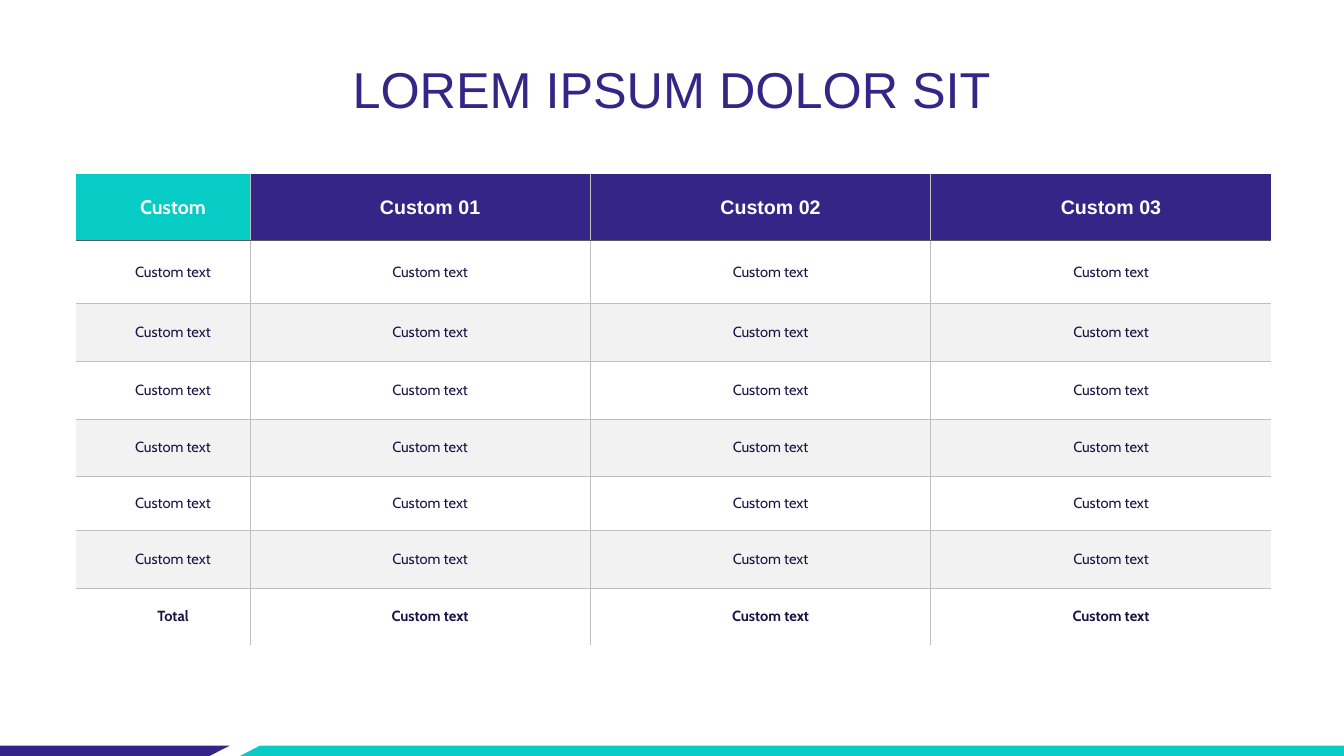
from dataclasses import dataclass

from lxml import etree
from pptx import Presentation
from pptx import util as u
from pptx.dml.color import RGBColor as Rgb
from pptx.enum import text as t
from pptx.oxml import ns


@dataclass(frozen=True)
class Theme:
    indigo: str = "342587"
    teal: str = "06CCC5"
    ink: str = "1A1344"
    white: str = "FFFFFF"
    band: str = "F2F2F2"
    rule: str = "BFBFBF"
    dark: str = "595959"
    title: float = 36
    head: float = 14
    body: float = 10.5
    sans: str = "Arial"
    text: str = "Cabin"


look = Theme()


def style(para, color, **form):
    para.alignment = t.PP_ALIGN.CENTER
    font = para.runs[0].font
    for key, val in form.items():
        setattr(font, key, val)
    font.color.rgb = Rgb.from_string(color)


def edge(cell, side, color, width):
    line = etree.SubElement(cell._tc.get_or_add_tcPr(), ns.qn("a:ln" + side))
    if color is None:
        etree.SubElement(line, ns.qn("a:noFill"))
        return
    line.set("w", str(u.Pt(width)))
    fill = etree.SubElement(line, ns.qn("a:solidFill"))
    etree.SubElement(fill, ns.qn("a:srgbClr"), val=color)


deck = Presentation()
deck.slide_width, deck.slide_height = u.Cm(33.87), u.Cm(19.05)
slide = deck.slides.add_slide(deck.slide_layouts[5])

# Footer bands
top, base = 18.79, 19.05
bands = [
    (look.indigo, [(0, top), (5.79, top), (5.28, base), (0, base)]),
    (look.teal, [(6.55, top), (33.87, top), (33.87, base), (6.05, base)]),
]
for color, points in bands:
    start, *rest = [(u.Cm(x), u.Cm(y)) for x, y in points]
    path = slide.shapes.build_freeform(*start)
    path.add_line_segments(rest, close=True)
    band = path.convert_to_shape()
    band.shadow.inherit = False
    band.fill.solid()
    band.fill.fore_color.rgb = Rgb.from_string(color)
    band.line.fill.background()

# Title
title = slide.shapes.title
place = {"left": 1.22, "top": 1.19, "width": 31.42, "height": 1.8}
for key, val in place.items():
    setattr(title, key, u.Cm(val))
frame = title.text_frame
frame.text = "LOREM IPSUM DOLOR SIT"
frame.auto_size = t.MSO_AUTO_SIZE.NONE
frame.vertical_anchor = t.MSO_ANCHOR.TOP
frame.margin_top, frame.margin_bottom = u.Cm(0.28), 0
style(frame.paragraphs[0], look.indigo, name=look.sans, size=u.Pt(look.title))

# Table content and sizes
rows = [
    ["Custom", "Custom 01", "Custom 02", "Custom 03"],
    *[["Custom text"] * 4 for _ in range(6)],
    ["Total"] + ["Custom text"] * 3,
]
wide = [4.38, 8.58, 8.58, 8.58]
high = [1.68, 1.58, 1.47, 1.44, 1.44, 1.38, 1.44, 1.44]
last, end = len(rows) - 1, len(wide) - 1

grid = slide.shapes.add_table(
    len(rows), len(wide), u.Cm(1.92), u.Cm(4.39), u.Cm(sum(wide)), u.Cm(sum(high))
).table
grid.first_row = grid.horz_banding = False
for col, size in zip(grid.columns, wide):
    col.width = u.Cm(size)
for row, size in zip(grid.rows, high):
    row.height = u.Cm(size)

# Table cells
for r, row in enumerate(rows):
    for c, words in enumerate(row):
        cell = grid.cell(r, c)
        cell.text = words
        cell.vertical_anchor = t.MSO_ANCHOR.MIDDLE

        # Rules run between cells only, darker under the header
        edge(cell, "L", look.rule if c > 0 else None, 0.75)
        edge(cell, "R", look.rule if c < end else None, 0.75)
        for side, near, inner in (("T", r - 1, r > 0), ("B", r, r < last)):
            color, width = (look.dark, 1) if near == 0 else (look.rule, 0.75)
            edge(cell, side, color if inner else None, width)

        if r == 0:
            fill = look.indigo if c else look.teal
            ink, size = look.white, look.head
        else:
            fill = look.white if r % 2 else look.band
            ink, size = look.ink, look.body
        cell.fill.solid()
        cell.fill.fore_color.rgb = Rgb.from_string(fill)

        para = cell.text_frame.paragraphs[0]
        prop = para._p.get_or_add_pPr()
        prop.set("marL", str(u.Cm(0.5)))
        prop.set("indent", "0")
        face = look.sans if r == 0 and c else look.text
        style(para, ink, name=face, size=u.Pt(size), bold=r in (0, last))

deck.save("out.pptx")
